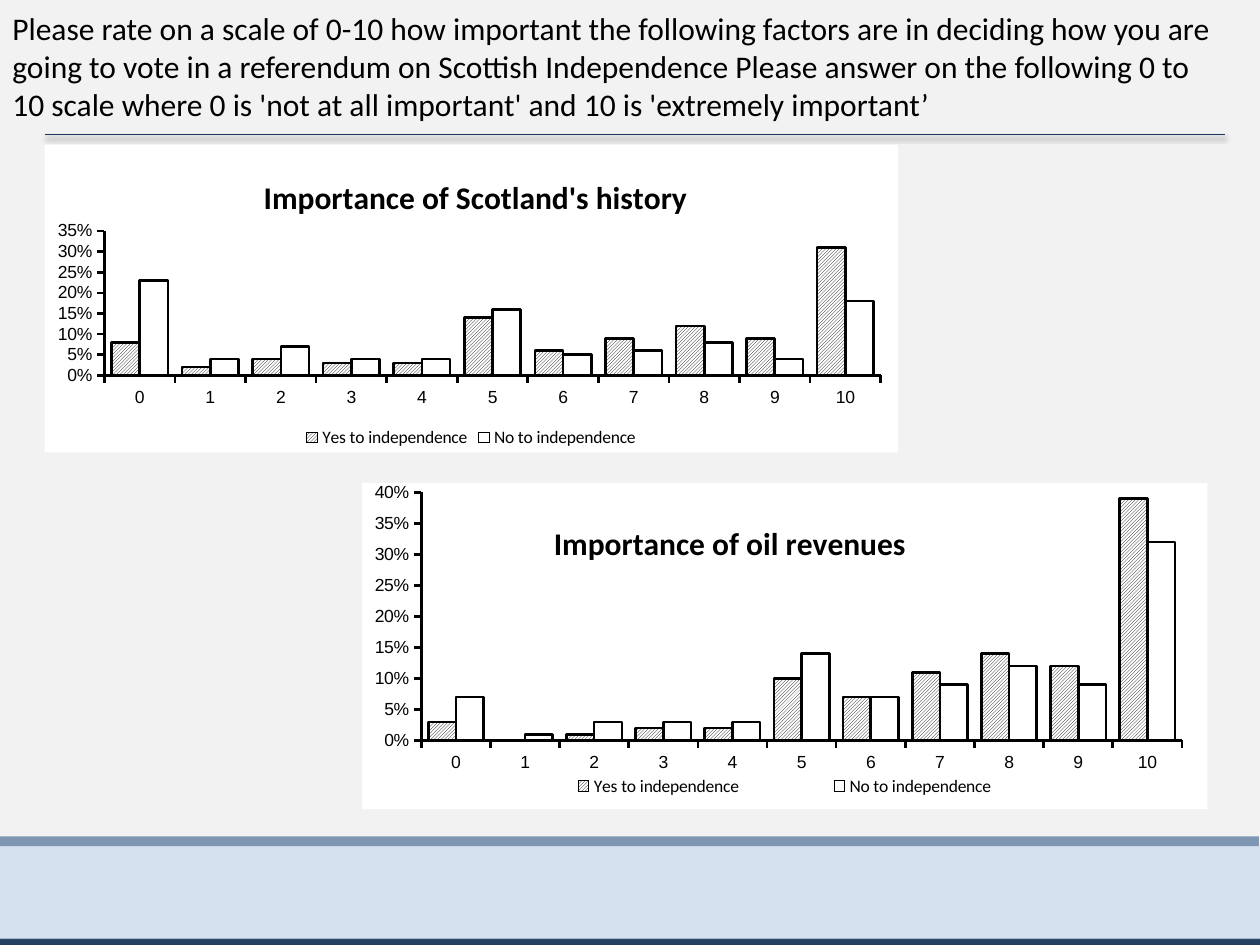
from dataclasses import dataclass

from lxml.etree import SubElement
from pptx import Presentation
from pptx.chart.data import CategoryChartData
from pptx.dml.color import RGBColor
from pptx.enum.chart import XL_CHART_TYPE, XL_LEGEND_POSITION, XL_TICK_MARK
from pptx.enum.dml import MSO_PATTERN
from pptx.enum.shapes import MSO_CONNECTOR, MSO_SHAPE
from pptx.enum.text import MSO_ANCHOR
from pptx.oxml import parse_xml
from pptx.oxml.ns import nsdecls, qn
from pptx.util import Cm, Pt


@dataclass(frozen=True)
class Theme:
    """Colours, fonts and type sizes of the deck."""
    background: str = "F2F2F2"
    ink: str = "000000"
    paper: str = "FFFFFF"
    rule: str = "17375E"
    navy: str = "254061"
    blue: str = "1F497D"
    sky: str = "8EB4E3"
    text_font: str = "Calibri"
    axis_font: str = "Arial"
    heading_size: int = 18
    label_size: int = 10
    outline: float = 1.5


def colour(code):
    """Turn a hex code into a colour."""
    return RGBColor.from_string(code)


def set_font(font, name, size, code, bold=False):
    """Apply a typeface, size, colour and weight."""
    font.name, font.size, font.bold = name, Pt(size), bold
    font.color.rgb = colour(code)


def write_text(frame, text, **style):
    """Fill a text frame with one formatted span."""
    span = frame.paragraphs[0].add_run()
    span.text = text
    set_font(span.font, **style)


def white_area(code):
    """Make the shape properties of an unlined chart area."""
    return parse_xml(
        f'<c:spPr {nsdecls("c", "a")}><a:solidFill><a:srgbClr val="{code}"/></a:solidFill>'
        '<a:ln><a:noFill/></a:ln></c:spPr>')


def place(element, after=None, inner=False, **fractions):
    """Position a chart part by fractions of the chart area."""
    for old in element.findall(qn("c:layout")):
        element.remove(old)
    layout = parse_xml(f'<c:layout {nsdecls("c")}><c:manualLayout/></c:layout>')
    manual = layout[0]
    if inner:
        SubElement(manual, qn("c:layoutTarget")).set("val", "inner")
    for axis in "xy":
        SubElement(manual, qn(f"c:{axis}Mode")).set("val", "edge")
    for name, value in fractions.items():
        SubElement(manual, qn(f"c:{name}")).set("val", str(value))
    if after:
        element.find(qn(after)).addnext(layout)
    else:
        element.insert(0, layout)


class SlideBuilder:
    """Draws themed elements on the current slide."""

    def __init__(self, page, theme):
        self.page, self.theme = page, theme
        page.background.fill.solid()
        page.background.fill.fore_color.rgb = colour(theme.background)

    def band(self, left, top, height, code, opacity=100):
        """Draw a strip across the slide."""
        box = self.page.shapes.add_shape(
            MSO_SHAPE.RECTANGLE, Cm(left), Cm(top), Cm(25.4), Cm(height))
        box.shadow.inherit = False
        box.line.fill.background()
        box.fill.solid()
        box.fill.fore_color.rgb = colour(code)
        if opacity < 100:
            shade = box.fill._xPr.find(f".//{qn('a:srgbClr')}")
            SubElement(shade, qn("a:alpha")).set("val", str(opacity * 1000))

    def rule(self, left, right, top):
        """Draw a horizontal line with a soft shadow."""
        line = self.page.shapes.add_connector(
            MSO_CONNECTOR.STRAIGHT, Cm(left), Cm(top), Cm(right), Cm(top))
        line.line.color.rgb = colour(self.theme.rule)
        line.line.width = Pt(1)
        line._element.spPr.append(parse_xml(
            f'<a:effectLst {nsdecls("a")}><a:outerShdw blurRad="40000" dist="20000" '
            'dir="5400000" rotWithShape="0"><a:srgbClr val="000000"><a:alpha val="38000"/>'
            '</a:srgbClr></a:outerShdw></a:effectLst>'))

    def heading(self, text, left, top, width, height):
        """Write the question at the top."""
        box = self.page.shapes.add_textbox(Cm(left), Cm(top), Cm(width), Cm(height))
        frame = box.text_frame
        frame.word_wrap = True
        frame.vertical_anchor = MSO_ANCHOR.MIDDLE
        write_text(frame, text, name=self.theme.text_font,
                   size=self.theme.heading_size, code=self.theme.ink)

    def column_chart(self, title, series, position, plot, title_at, legend=None, top_value=0.35):
        """Add a chart of importance ratings from 0 to 10."""
        theme = self.theme
        data = CategoryChartData(number_format="0%")
        data.categories = [str(score) for score in range(11)]
        for name, values in series.items():
            data.add_series(name, values)
        chart = self.page.shapes.add_chart(
            XL_CHART_TYPE.COLUMN_CLUSTERED, *map(Cm, position), data).chart
        set_font(chart.font, theme.text_font, theme.label_size, theme.ink)

        chart.has_title = True
        write_text(chart.chart_title.text_frame, title, name=theme.text_font,
                   size=theme.heading_size, code=theme.ink, bold=True)
        chart.chart_title.include_in_layout = True
        place(chart.chart_title._element, "c:tx", **title_at)

        chart.has_legend = True
        chart.legend.position = XL_LEGEND_POSITION.BOTTOM
        chart.legend.include_in_layout = False
        if legend:
            place(chart.legend._element, "c:legendPos", **legend)

        for axis, number_format in ((chart.category_axis, "0"), (chart.value_axis, "0%")):
            axis.has_major_gridlines = False
            axis.major_tick_mark = XL_TICK_MARK.OUTSIDE
            axis.tick_labels.number_format = number_format
            axis.tick_labels.number_format_is_linked = False
            set_font(axis.tick_labels.font, theme.axis_font, theme.label_size, theme.ink)
            self.outline(axis.format.line)
        chart.value_axis.minimum_scale = 0
        chart.value_axis.maximum_scale = top_value
        chart.value_axis.major_unit = 0.05

        columns = chart.plots[0]
        columns.gap_width, columns.overlap, columns.vary_by_categories = 50, 0, False
        yes, no = columns.series
        yes.format.fill.patterned()
        yes.format.fill.pattern = MSO_PATTERN.DARK_UPWARD_DIAGONAL
        yes.format.fill.fore_color.rgb = colour(theme.ink)
        yes.format.fill.back_color.rgb = colour(theme.paper)
        no.format.fill.solid()
        no.format.fill.fore_color.rgb = colour(theme.paper)
        for answer in (yes, no):
            answer.invert_if_negative = False
            self.outline(answer.format.line)

        body = chart._chartSpace.find(qn("c:chart"))
        body.addnext(white_area(theme.paper))
        area = body.find(qn("c:plotArea"))
        area.append(white_area(theme.paper))
        place(area, inner=True, **plot)

    def outline(self, line):
        """Give a line the chart's stroke."""
        line.color.rgb = colour(self.theme.ink)
        line.width = Pt(self.theme.outline)


def main():
    """Build and save the deck."""
    theme = Theme()
    deck = Presentation()
    deck.slide_width, deck.slide_height = Cm(25.4), Cm(19.05)
    builder = SlideBuilder(deck.slides.add_slide(deck.slide_layouts[6]), theme)

    builder.band(0, 18.92, 0.2, theme.navy)
    builder.band(-0.02, 16.86, 0.2, theme.blue, opacity=54)
    builder.band(0, 17.06, 1.88, theme.sky, opacity=29)
    builder.rule(0.9, 24.69, 2.71)
    builder.heading(
        "Please rate on a scale of 0-10 how important the following factors are in deciding "
        "how you are going to vote in a referendum on Scottish Independence Please answer on "
        "the following 0 to 10 scale where 0 is 'not at all important' and 10 is "
        "'extremely important’", 0, 0.13, 24.79, 2.39)

    builder.column_chart(
        "Importance of Scotland's history",
        {"Yes to independence": (0.08, 0.02, 0.04, 0.03, 0.03, 0.14, 0.06, 0.09, 0.12, 0.09, 0.31),
         "No to independence": (0.23, 0.04, 0.07, 0.04, 0.04, 0.16, 0.05, 0.06, 0.08, 0.04, 0.18)},
        position=(0.9, 2.92, 17.2, 6.2),
        plot={"x": 0.07, "y": 0.28, "w": 0.91, "h": 0.47},
        title_at={"x": 0.25, "y": 0.08})
    builder.column_chart(
        "Importance of oil revenues",
        {"Yes to independence": (0.03, 0, 0.01, 0.02, 0.02, 0.1, 0.07, 0.11, 0.14, 0.12, 0.39),
         "No to independence": (0.07, 0.01, 0.03, 0.03, 0.03, 0.14, 0.07, 0.09, 0.12, 0.09, 0.32)},
        position=(7.3, 9.73, 17.04, 6.58),
        plot={"x": 0.07, "y": 0.03, "w": 0.9, "h": 0.76},
        title_at={"x": 0.22, "y": 0.1},
        legend={"x": 0.15, "y": 0.89, "w": 0.7, "h": 0.08}, top_value=0.4)
    deck.save("out.pptx")


if __name__ == "__main__":
    main()
